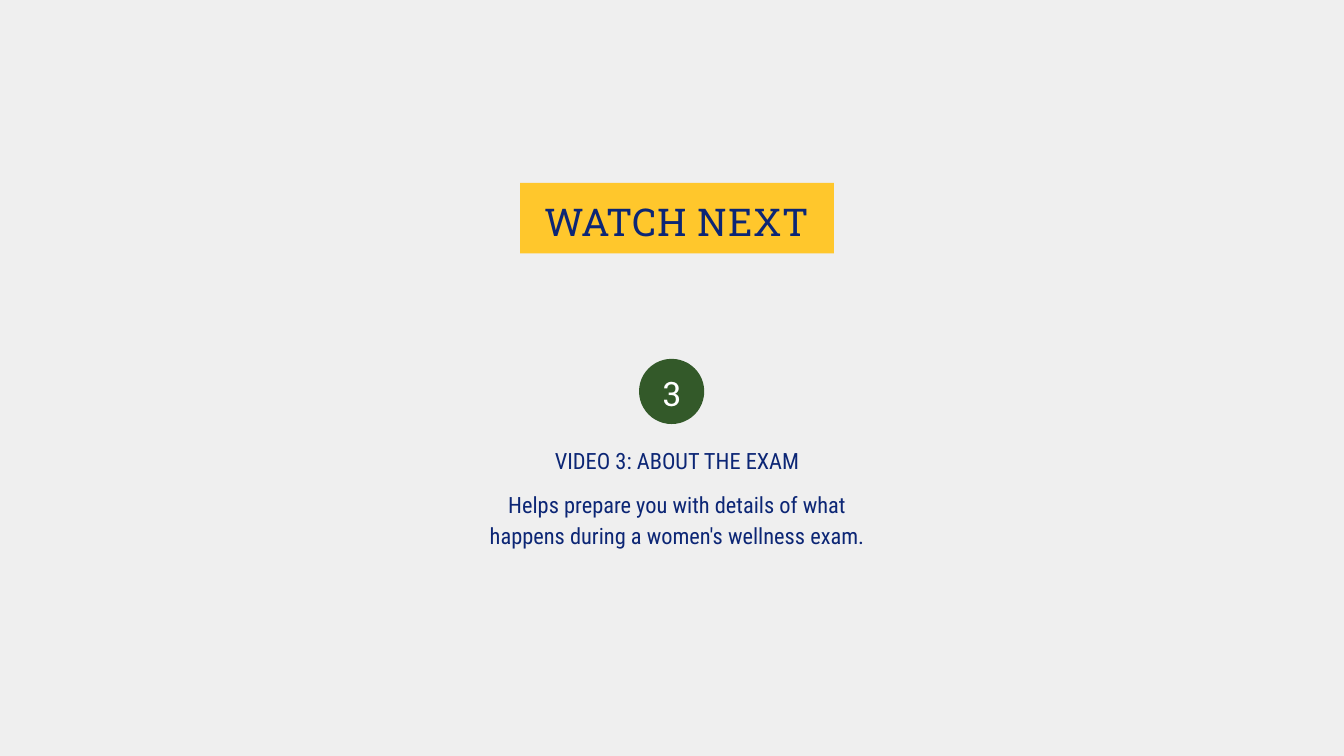
from pptx import Presentation
from pptx.dml.color import RGBColor
from pptx.enum import shapes, text
from pptx.util import Inches, Pt

BACKGROUND = RGBColor(0xEF, 0xEF, 0xEF)
NAVY = RGBColor(0x0C, 0x26, 0x75)
GOLD = RGBColor(0xFF, 0xC7, 0x2C)
GREEN = RGBColor(0x33, 0x59, 0x29)
WHITE = RGBColor(0xFF, 0xFF, 0xFF)
SLAB, CONDENSED = "Roboto Slab", "Roboto Condensed"

# preset, (left, top, width, height), fill
PANELS = [
    (shapes.MSO_SHAPE.OVAL, (9.51, 5.34, 0.97, 0.97), GREEN),
    (shapes.MSO_SHAPE.RECTANGLE, (7.74, 2.72, 4.67, 1.05), GOLD),
]
# wording, (left, top, width, height), font, size, colour, letter spacing in points
TEXTS = [
    ("3", (9.83, 5.45, 0.34, 0.66), SLAB, 36, WHITE, 0),
    ("VIDEO 3: ABOUT THE EXAM", (7.16, 6.59, 5.83, 0.44), CONDENSED, 24, NAVY, 0),
    ("Helps prepare you with details of what happens during a women's wellness exam.",
     (7.16, 7.24, 5.83, 0.9), CONDENSED, 24, NAVY, 0),
    ("WATCH NEXT", (7.74, 2.83, 4.67, 0.76), SLAB, 41, NAVY, 0.8),
]
LINE_HEIGHT = 1.4  # line spacing as a multiple of the font size


def add_panel(slide, preset, box, fill):
    shape = slide.shapes.add_shape(preset, *map(Inches, box))
    shape.shadow.inherit = False
    shape.fill.solid()
    shape.fill.fore_color.rgb = fill
    shape.line.fill.background()


def add_text(slide, wording, box, font, size, colour, spacing):
    frame = slide.shapes.add_textbox(*map(Inches, box)).text_frame
    frame.word_wrap = True
    frame.auto_size = text.MSO_AUTO_SIZE.SHAPE_TO_FIT_TEXT
    frame.margin_left = frame.margin_top = frame.margin_right = frame.margin_bottom = 0
    paragraph = frame.paragraphs[0]
    run = paragraph.add_run()
    run.text = wording
    paragraph.alignment = text.PP_ALIGN.CENTER
    paragraph.line_spacing = Pt(LINE_HEIGHT * size)
    paragraph.font.name = font
    paragraph.font.size = Pt(size)
    paragraph.font.color.rgb = colour
    if spacing:
        run.font._element.set("spc", str(round(spacing * 100)))


def main():
    presentation = Presentation()
    presentation.slide_width = Inches(20)
    presentation.slide_height = Inches(11.25)
    slide = presentation.slides.add_slide(presentation.slide_layouts[6])
    slide.background.fill.solid()
    slide.background.fill.fore_color.rgb = BACKGROUND
    for panel in PANELS:
        add_panel(slide, *panel)
    for item in TEXTS:
        add_text(slide, *item)
    presentation.save("out.pptx")


if __name__ == "__main__":
    main()
